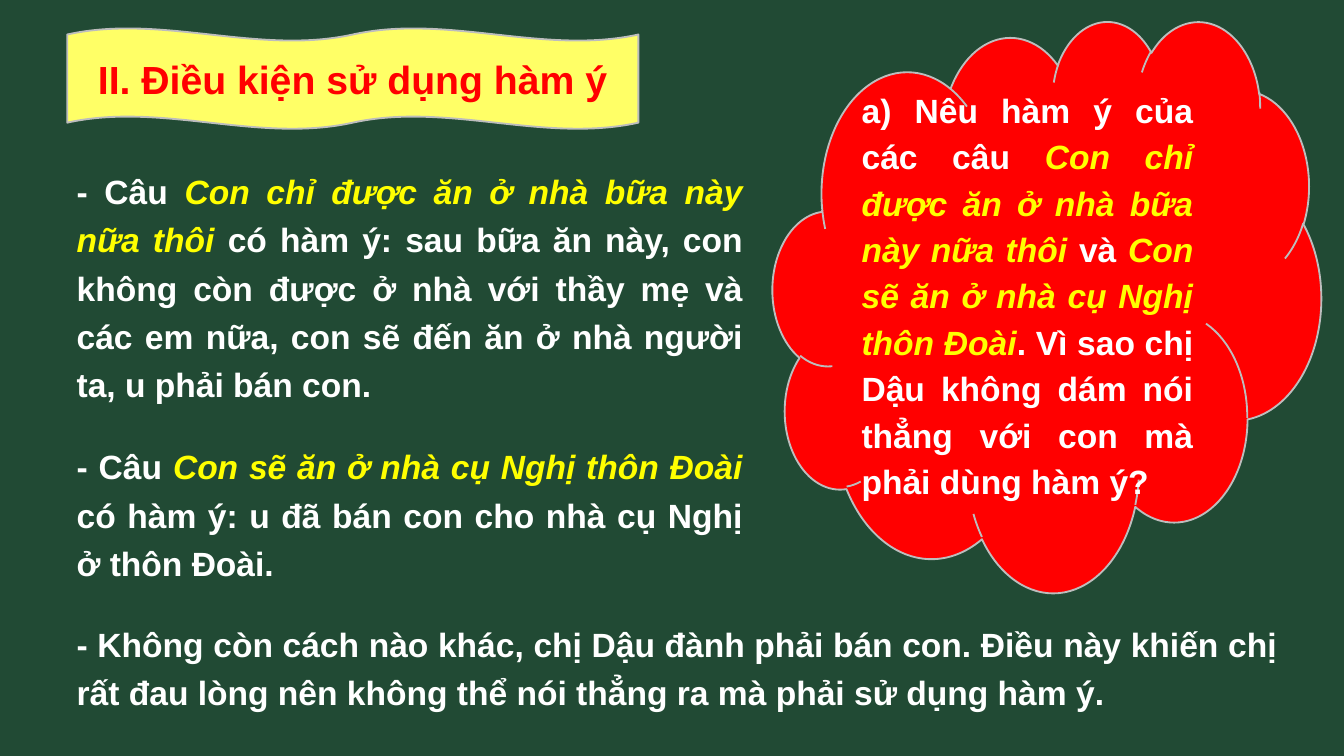
"""Build the slide on the conditions for using implied meaning."""
from lxml.etree import SubElement
from pptx import Presentation
from pptx.dml.color import RGBColor
from pptx.enum.shapes import MSO_SHAPE
from pptx.enum.text import MSO_ANCHOR, MSO_AUTO_SIZE, PP_ALIGN
from pptx.oxml.ns import qn
from pptx.util import Inches, Pt

COLORS = {
    "board": "214A34", "banner": "FFFF66", "cloud": "FF0000", "outline": "BDBDBD",
    "heading": "FF0000", "text": "FFFFFF", "quote": "FFFF00",
}
ANSWERS = [
    "- Câu |Con chỉ được ăn ở nhà bữa này nữa thôi |có hàm ý: sau bữa ăn này, con không còn "
    "được ở nhà với thầy mẹ và các em nữa, con sẽ đến ăn ở nhà người ta, u phải bán con.",
    "- Câu |Con sẽ ăn ở nhà cụ Nghị thôn Đoài |có hàm ý: u đã bán con cho nhà cụ Nghị ở thôn Đoài.",
]
REASON = (
    "- Không còn cách nào khác, chị Dậu đành phải bán con. Điều này khiến chị rất đau lòng "
    "nên không thể nói thẳng ra mà phải sử dụng hàm ý."
)
QUESTION = (
    "a) Nêu hàm ý của các câu |Con chỉ được ăn ở nhà bữa này nữa thôi |và |Con sẽ ăn ở nhà cụ "
    "Nghị thôn Đoài|. Vì sao chị Dậu không dám nói thẳng với con mà phải dùng hàm ý?"
)


def rgb(name):
    """Return the named colour."""
    return RGBColor.from_string(COLORS[name])


def write(paragraph, text, spacing, before=0):
    """Write justified text in which every second part between bars is a quote."""
    properties = paragraph._p.get_or_add_pPr()
    properties.set("marL", "0")
    properties.set("indent", "0")
    SubElement(properties, qn("a:buNone"))
    paragraph.alignment = PP_ALIGN.JUSTIFY
    paragraph.line_spacing = spacing
    paragraph.space_before = Pt(before)
    for index, part in enumerate(text.split("|")):
        run = paragraph.add_run()
        run.text = part
        run.font.name = "Arial"
        run.font.size = Pt(18)
        run.font.bold = True
        run.font.italic = index % 2 == 1
        run.font.color.rgb = rgb("quote" if index % 2 else "text")


prs = Presentation()
prs.slide_width, prs.slide_height = Inches(10), Inches(5.625)
slide = prs.slides.add_slide(prs.slide_layouts[1])
slide.background.fill.solid()
slide.background.fill.fore_color.rgb = rgb("board")

heading, answers = slide.placeholders
heading.left, heading.top = Inches(0.5), Inches(0.21)
heading.width, heading.height = Inches(4.25), Inches(0.75)
heading.text_frame.text = "II. Điều kiện sử dụng hàm ý"
heading.text_frame.auto_size = MSO_AUTO_SIZE.NONE
heading.text_frame.vertical_anchor = MSO_ANCHOR.MIDDLE
heading.text_frame.paragraphs[0].alignment = PP_ALIGN.CENTER
heading_font = heading.text_frame.paragraphs[0].runs[0].font
heading_font.name, heading_font.size, heading_font.bold = "Arial", Pt(21), True
heading_font.color.rgb = rgb("heading")

answers.left, answers.top = Inches(0.5), Inches(1.17)
answers.width, answers.height = Inches(5.1), Inches(3.56)

banner = slide.shapes.add_shape(
    MSO_SHAPE.DOUBLE_WAVE, heading.left, heading.top, heading.width, heading.height)
heading._element.addprevious(banner._element)

cloud = slide.shapes.add_shape(
    MSO_SHAPE.CLOUD, Inches(5.75), Inches(0.15), Inches(4.08), Inches(4.25))
cloud.text_frame.vertical_anchor = MSO_ANCHOR.MIDDLE
question = cloud.text_frame.paragraphs[0]
write(question, QUESTION, 1.15)
question.space_after = Pt(7.5)

for panel, color in ((banner, "banner"), (cloud, "cloud")):
    panel.shadow.inherit = False
    panel.fill.solid()
    panel.fill.fore_color.rgb = rgb(color)
    panel.line.color.rgb = rgb("outline")
    panel.line.width = Pt(1)

reason = slide.shapes.add_textbox(Inches(0.5), Inches(4.54), Inches(9.08), Inches(0.77))

for block, texts in ((answers, ANSWERS), (reason, [REASON])):
    frame = block.text_frame
    frame.word_wrap = True
    frame.auto_size = MSO_AUTO_SIZE.NONE
    frame.margin_left = frame.margin_right = Inches(0.07)
    frame.margin_top = frame.margin_bottom = Inches(0.04)
    for index, text in enumerate(texts):
        paragraph = frame.add_paragraph() if index else frame.paragraphs[0]
        write(paragraph, text, 1.2, 18 if index else 0)

prs.save("out.pptx")
